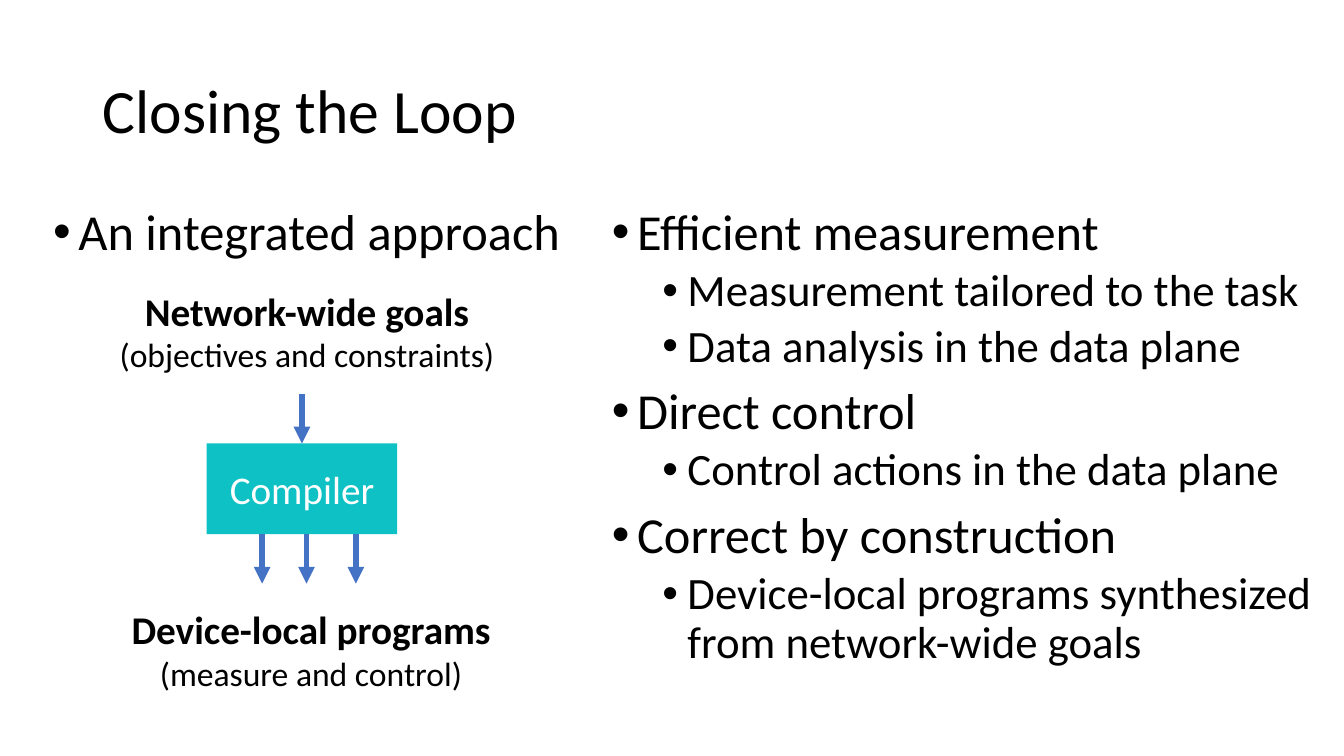
import pptx
import pptx.util
import pptx.dml.color
import pptx.enum.shapes
import pptx.enum.text
import pptx.oxml
import pptx.oxml.ns
import lxml.etree

RGBColor = pptx.dml.color.RGBColor
BLACK = RGBColor(0x00, 0x00, 0x00)
WHITE = RGBColor(0xFF, 0xFF, 0xFF)
TEAL = RGBColor(0x0E, 0xC1, 0xC4)
BLUE = RGBColor(0x44, 0x72, 0xC4)
FONT = "Calibri"
ALIGN = pptx.enum.text.PP_ALIGN
ANCHOR = pptx.enum.text.MSO_ANCHOR

# Content: bullets are (level, text); boxes are (left, top, width, height) in px
TITLE = "Closing the Loop"
TITLE_BOX = (92, 40, 1150, 145)
BULLET_LISTS = [
    ((43, 200, 567, 129), [(0, "An integrated approach")]),
    ((597, 200, 722, 494), [
        (0, "Efficient measurement"),
        (1, "Measurement tailored to the task"),
        (1, "Data analysis in the data plane"),
        (0, "Direct control"),
        (1, "Control actions in the data plane"),
        (0, "Correct by construction"),
        (1, "Device-local programs synthesized from network-wide goals"),
    ]),
]
CAPTIONS = [
    ((91, 280, 427, 98), "Network-wide goals", "(objectives and constraints)"),
    ((118, 596, 381, 98), "Device-local programs", "(measure and control)"),
]
COMPILER = "Compiler"
COMPILER_BOX = (205, 440, 189, 90)
OUTPUT_XS = (260, 304, 353)
ARROW_LENGTH = 49

# Per bullet level: text size, space before, left indent in px
LEVELS = [(36, 10, 25), (32, 5, 75)]
HANGING = 25


def px(length):
    """Turn px, 100 to the inch, into EMU."""
    return pptx.util.Emu(round(length * 9144))


def place(box):
    return [px(length) for length in box]


def write(frame, text, size, color=BLACK, bold=False, align=ALIGN.LEFT,
          line_spacing=None, space_before=0):
    """Add one paragraph to a text frame, using the empty first one if any."""
    para = frame.paragraphs[0]
    if para.runs:
        para = frame.add_paragraph()
    para.alignment = align
    para.space_before = pptx.util.Pt(space_before)
    if line_spacing:
        para.line_spacing = line_spacing
    span = para.add_run()
    span.text = text
    span.font.name = FONT
    span.font.size = pptx.util.Pt(size)
    span.font.bold = bold
    span.font.color.rgb = color
    return para


def add_text_frame(slide, box):
    frame = slide.shapes.add_textbox(*place(box)).text_frame
    frame.word_wrap = True
    return frame


def add_bullet(frame, level, text):
    size, space_before, indent = LEVELS[level]
    para = write(frame, text, size, line_spacing=0.9, space_before=space_before)
    para.level = level
    properties = para._p.get_or_add_pPr()
    properties.set("marL", str(px(indent)))
    properties.set("indent", str(px(-HANGING)))
    qn = pptx.oxml.ns.qn
    lxml.etree.SubElement(properties, qn("a:buFont")).set("typeface", "Arial")
    lxml.etree.SubElement(properties, qn("a:buChar")).set("char", "•")


def add_down_arrow(slide, x, top):
    arrow = slide.shapes.add_connector(
        pptx.enum.shapes.MSO_CONNECTOR.STRAIGHT,
        *place((x, top, x, top + ARROW_LENGTH)))
    arrow.line.color.rgb = BLUE
    arrow.line.width = pptx.util.Pt(4)
    qn = pptx.oxml.ns.qn
    line = arrow.line._get_or_add_ln()
    lxml.etree.SubElement(line, qn("a:tailEnd")).set("type", "triangle")
    lxml.etree.SubElement(arrow._element.spPr, qn("a:effectLst"))
    return arrow


def add_compiler(slide):
    left, top, width, height = COMPILER_BOX
    compiler = slide.shapes.add_shape(
        pptx.enum.shapes.MSO_SHAPE.RECTANGLE, *place(COMPILER_BOX))
    compiler.shadow.inherit = False
    compiler.fill.solid()
    compiler.fill.fore_color.rgb = TEAL
    compiler.line.fill.background()
    compiler.text_frame.vertical_anchor = ANCHOR.MIDDLE
    write(compiler.text_frame, COMPILER, 28, color=WHITE, align=ALIGN.CENTER)

    goal_arrow = add_down_arrow(slide, left + width / 2, top - ARROW_LENGTH)
    goal_arrow.end_connect(compiler, 0)
    for x in OUTPUT_XS:
        add_down_arrow(slide, x, top + height)


def main():
    deck = pptx.Presentation()
    deck.slide_width, deck.slide_height = place((1333, 750))
    slide = deck.slides.add_slide(deck.slide_layouts[5])

    title = slide.shapes.title
    title.left, title.top, title.width, title.height = place(TITLE_BOX)
    title.text_frame.vertical_anchor = ANCHOR.MIDDLE
    title.text_frame.auto_size = pptx.enum.text.MSO_AUTO_SIZE.NONE
    write(title.text_frame, TITLE, 44, line_spacing=0.9)

    for box, bullets in BULLET_LISTS:
        frame = add_text_frame(slide, box)
        for level, text in bullets:
            add_bullet(frame, level, text)

    for box, heading, detail in CAPTIONS:
        frame = add_text_frame(slide, box)
        write(frame, heading, 28, bold=True, align=ALIGN.CENTER)
        write(frame, detail, 24, align=ALIGN.CENTER)

    add_compiler(slide)
    deck.save("out.pptx")


if __name__ == "__main__":
    main()
